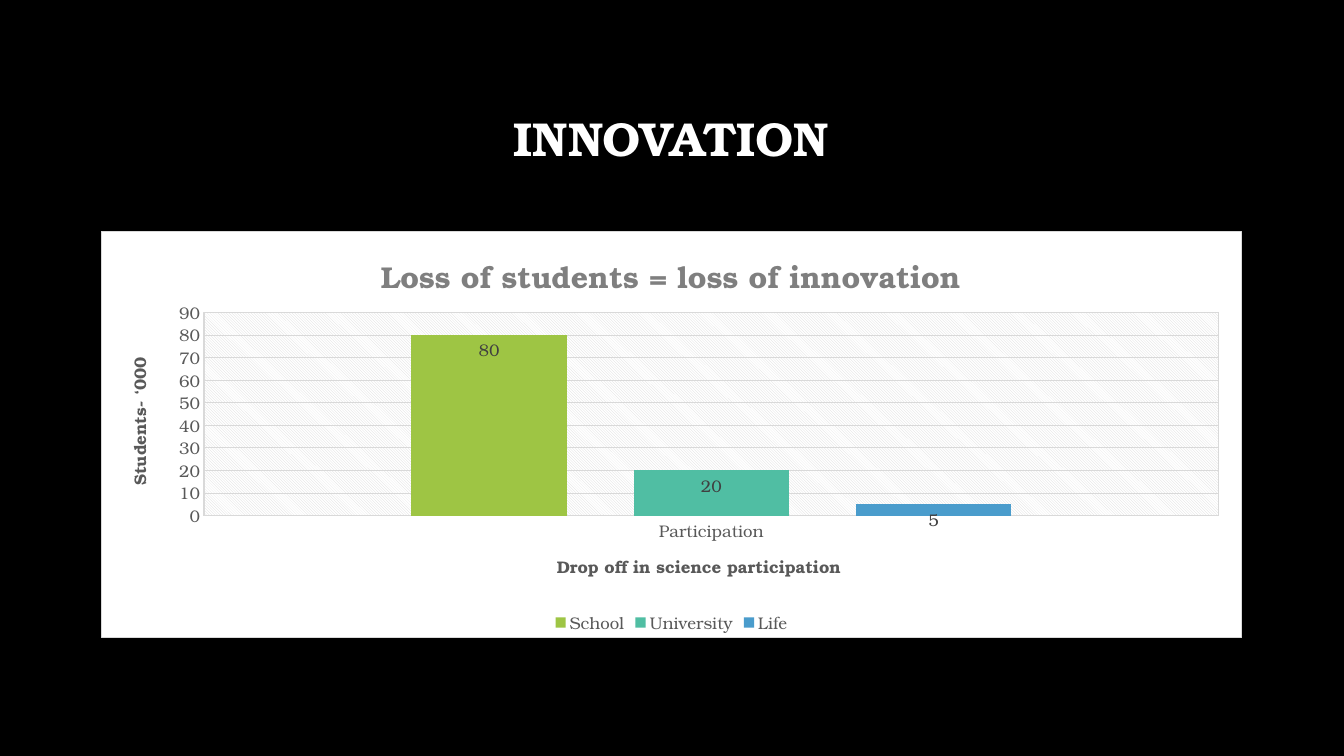
from dataclasses import dataclass

from pptx import Presentation, oxml, util as u
from pptx.chart.data import CategoryChartData
from pptx.dml.color import RGBColor
from pptx.enum import chart as kinds, text
from pptx.oxml import ns

HEADING = "INNOVATION"
CHART_TITLE = "Loss of students = loss of innovation"
CATEGORY_TITLE = "Drop off in science participation"
VALUE_TITLE = "Students- ‘000"
CATEGORIES = ["Participation"]
SERIES = [("School", 80, "9EC544"), ("University", 20, "50BEA3"), ("Life", 5, "4A9CCC")]


@dataclass(frozen=True)
class Theme:
    font: str = "TeX Gyre Bonum"
    back: str = "000000"
    panel: str = "FFFFFF"
    heading: str = "FFFFFF"
    title: str = "7F7F7F"
    label: str = "595959"
    value: str = "404040"
    grid: str = "D9D9D9"
    heading_size: float = 34
    title_size: float = 21.6
    label_size: float = 12


THEME = Theme()
WIDTH, HEIGHT = u.Inches(13.33), u.Inches(7.5)
LEFT, SPAN = u.Inches(1), u.Inches(11.32)
HEADING_ROW = (u.Inches(0.67), u.Inches(1.45))
CHART_ROW = (u.Inches(2.29), u.Inches(4.04))
PLOT_SHARES = {"x": 0.09, "y": 0.2, "w": 0.89, "h": 0.5}


def style(font, size, color, bold=False):
    font.name, font.size, font.bold = THEME.font, u.Pt(size), bold
    font.color.rgb = RGBColor.from_string(color)


def write(frame, words, **look):
    para = frame.paragraphs[0]
    span = para.add_run()
    span.text = words
    style(span.font, **look)
    return para


def draw_line(line):
    line.width = u.Pt(0.75)
    line.color.rgb = RGBColor.from_string(THEME.grid)


def area_format(fill):
    """Shape properties for a chart area, with the given fill and a thin border."""
    return oxml.parse_xml(
        f'<c:spPr {ns.nsdecls("c", "a")}>{fill}<a:ln w="9525">{solid(THEME.grid)}</a:ln></c:spPr>')


def solid(color):
    return f'<a:solidFill><a:srgbClr val="{color}"/></a:solidFill>'


def format_areas(chart):
    space = chart.element
    space.find(ns.qn("c:chart")).addnext(area_format(solid(THEME.panel)))
    plot_area = space.find(".//" + ns.qn("c:plotArea"))
    plot_area.append(area_format(
        f'<a:pattFill prst="ltDnDiag"><a:fgClr><a:srgbClr val="{THEME.grid}"/></a:fgClr>'
        f'<a:bgClr><a:srgbClr val="{THEME.panel}"/></a:bgClr></a:pattFill>'))
    for old in plot_area.findall(ns.qn("c:layout")):
        plot_area.remove(old)
    modes = "".join(f'<c:{side}Mode val="edge"/>' for side in "xy")
    shares = "".join(f'<c:{side} val="{share}"/>' for side, share in PLOT_SHARES.items())
    plot_area.insert(0, oxml.parse_xml(
        f'<c:layout {ns.nsdecls("c")}><c:manualLayout><c:layoutTarget val="inner"/>'
        f'{modes}{shares}</c:manualLayout></c:layout>'))


def format_axis(axis, title):
    axis.has_major_gridlines = True
    draw_line(axis.major_gridlines.format.line)
    axis.major_tick_mark = axis.minor_tick_mark = kinds.XL_TICK_MARK.NONE
    style(axis.tick_labels.font, THEME.label_size, THEME.label)
    write(axis.axis_title.text_frame, title, size=THEME.label_size, color=THEME.label, bold=True)


def add_heading(page):
    box = page.shapes.add_textbox(LEFT, HEADING_ROW[0], SPAN, HEADING_ROW[1])
    frame = box.text_frame
    frame.word_wrap = True
    frame.vertical_anchor = text.MSO_ANCHOR.MIDDLE
    para = write(frame, HEADING, size=THEME.heading_size, color=THEME.heading, bold=True)
    para.alignment = text.PP_ALIGN.CENTER
    para.line_spacing = 0.9


def add_student_chart(page):
    data = CategoryChartData()
    data.categories = CATEGORIES
    for name, value, _ in SERIES:
        data.add_series(name, [value])
    chart = page.shapes.add_chart(kinds.XL_CHART_TYPE.COLUMN_CLUSTERED, LEFT, CHART_ROW[0],
                                  SPAN, CHART_ROW[1], data).chart
    style(chart.font, THEME.label_size, THEME.label)
    write(chart.chart_title.text_frame, CHART_TITLE,
          size=THEME.title_size, color=THEME.title, bold=True)
    chart.chart_title.include_in_layout = False
    chart.has_legend = True
    chart.legend.position = kinds.XL_LEGEND_POSITION.BOTTOM
    chart.legend.include_in_layout = False
    style(chart.legend.font, THEME.label_size, THEME.label)

    format_axis(chart.category_axis, CATEGORY_TITLE)
    format_axis(chart.value_axis, VALUE_TITLE)
    draw_line(chart.category_axis.format.line)
    chart.value_axis.format.line.fill.background()
    chart.value_axis.minimum_scale = 0
    chart.value_axis.maximum_scale = 90
    chart.value_axis.major_unit = 10

    plot = chart.plots[0]
    plot.gap_width, plot.overlap, plot.vary_by_categories = 267, -43, False
    for series, (_, _, color) in zip(plot.series, SERIES):
        series.format.fill.solid()
        series.format.fill.fore_color.rgb = RGBColor.from_string(color)
        labels = series.data_labels
        labels.show_value = True
        labels.position = kinds.XL_LABEL_POSITION.INSIDE_END
        style(labels.font, THEME.label_size, THEME.value)
    format_areas(chart)


def main():
    deck = Presentation()
    deck.slide_width, deck.slide_height = WIDTH, HEIGHT
    page = deck.slides.add_slide(deck.slide_layouts[6])
    page.background.fill.solid()
    page.background.fill.fore_color.rgb = RGBColor.from_string(THEME.back)
    add_heading(page)
    add_student_chart(page)
    deck.save("out.pptx")


if __name__ == "__main__":
    main()
